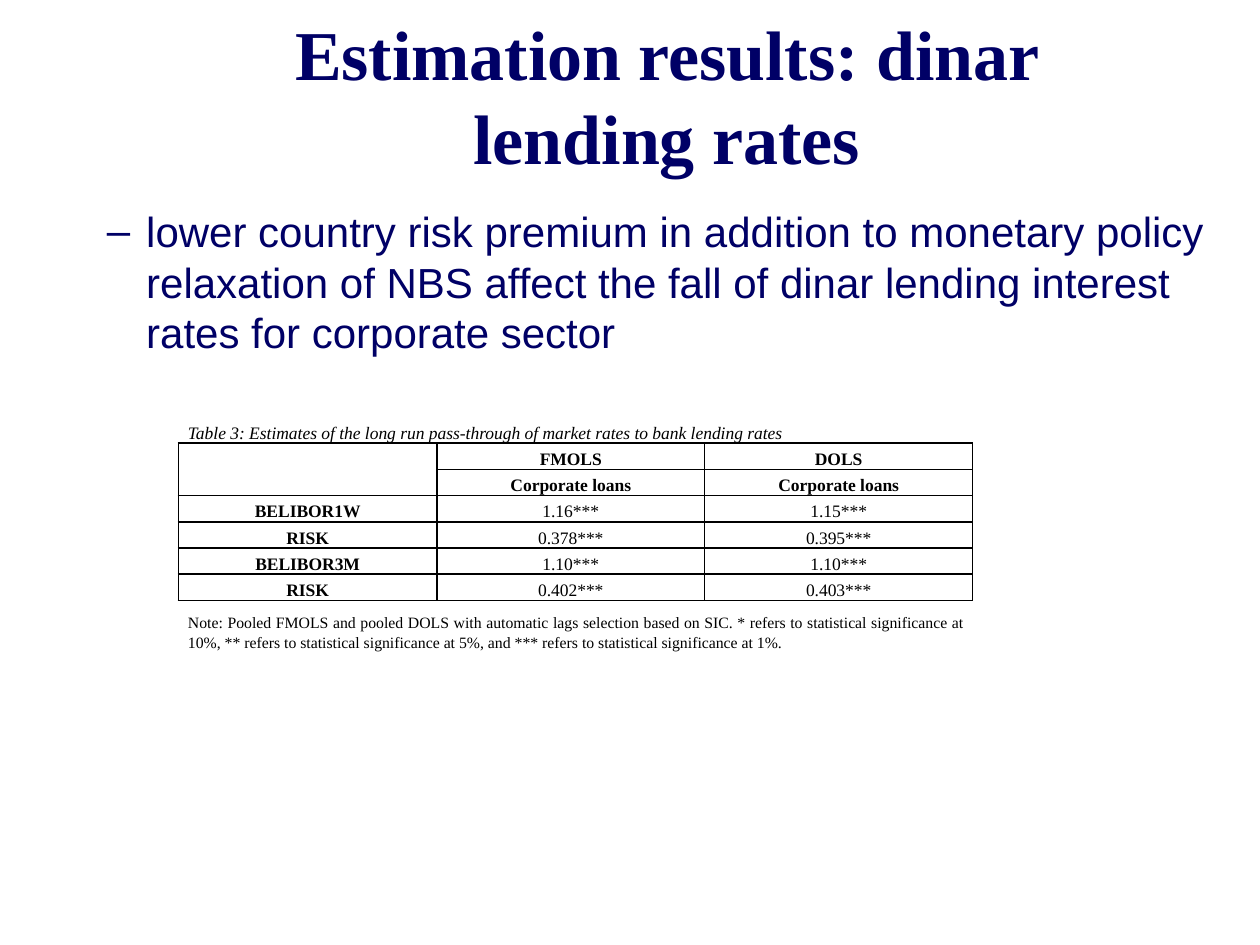
from lxml import etree
from pptx import Presentation
from pptx.dml.color import RGBColor
from pptx.enum.text import MSO_ANCHOR, PP_ALIGN
from pptx.oxml.ns import qn
from pptx.util import Pt

LEFT, CENTER, JUSTIFY = PP_ALIGN.LEFT, PP_ALIGN.CENTER, PP_ALIGN.JUSTIFY
TOP, MIDDLE, BOTTOM = MSO_ANCHOR.TOP, MSO_ANCHOR.MIDDLE, MSO_ANCHOR.BOTTOM
COLORS = {"navy": "000066", "black": "000000"}
SERIF, SANS = "Times New Roman", "Arial"

TITLE = "Estimation results: dinar lending rates"
POINT = ("lower country risk premium in addition to monetary policy relaxation of NBS "
         "affect the fall of dinar lending interest rates for corporate sector")
CAPTION = "Table 3: Estimates of the long run pass-through of market rates to bank lending rates"
NOTE = ("Note: Pooled FMOLS and pooled DOLS with automatic lags selection based on SIC. "
        "* refers to statistical significance at 10%, ** refers to statistical significance "
        "at 5%, and *** refers to statistical significance at 1%.")
ESTIMATES = [
    ("", "FMOLS", "DOLS"),
    ("", "Corporate loans", "Corporate loans"),
    ("BELIBOR1W", "1.16***", "1.15***"),
    ("RISK", "0.378***", "0.395***"),
    ("BELIBOR3M", "1.10***", "1.10***"),
    ("RISK", "0.402***", "0.403***"),
]
HEADER_ROWS = 2
COLUMN_WIDTHS = [147.6, 153.1, 153.1]
CAPTION_HEIGHT, ROW_HEIGHT, NOTE_HEIGHT = 25, 15, 36
TABLE_LEFT, TABLE_TOP = 102, 228.2


def write(frame, text, *, size, font=SERIF, color="black", bold=False, italic=False,
          align=LEFT, spacing=None):
    paragraph = frame.paragraphs[0]
    paragraph.alignment = align
    if spacing:
        paragraph.line_spacing = spacing
    run = paragraph.add_run()
    run.text = text
    run.font.size, run.font.name = Pt(size), font
    run.font.bold, run.font.italic = bold, italic
    run.font.color.rgb = RGBColor.from_string(COLORS[color])
    return paragraph


def add_text_frame(slide, left, top, width, height, anchor):
    box = slide.shapes.add_textbox(Pt(left), Pt(top), Pt(width), Pt(height))
    box.text_frame.word_wrap = True
    box.text_frame.vertical_anchor = anchor
    return box.text_frame


def add_dash_bullet(paragraph, margin, indent):
    properties = paragraph._p.get_or_add_pPr()
    properties.set("marL", str(Pt(margin)))
    properties.set("indent", str(Pt(indent)))
    etree.SubElement(properties, qn("a:buFont"), typeface=SANS)
    etree.SubElement(properties, qn("a:buChar"), char="–")


def set_borders(cell, sides):
    """Draw the named sides in black and clear the others."""
    properties = cell._tc.get_or_add_tcPr()
    for position, side in enumerate("LRTB"):
        line = etree.Element(qn("a:ln" + side), w=str(Pt(1)))
        if side in sides:
            fill = etree.SubElement(line, qn("a:solidFill"))
            etree.SubElement(fill, qn("a:srgbClr"), val=COLORS["black"])
        else:
            etree.SubElement(line, qn("a:noFill"))
        properties.insert(position, line)


def add_estimates_table(slide):
    heights = [CAPTION_HEIGHT] + [ROW_HEIGHT] * len(ESTIMATES) + [NOTE_HEIGHT]
    last = len(heights) - 1
    table = slide.shapes.add_table(
        len(heights), len(COLUMN_WIDTHS), Pt(TABLE_LEFT), Pt(TABLE_TOP),
        Pt(sum(COLUMN_WIDTHS)), Pt(sum(heights))).table
    for column, width in zip(table.columns, COLUMN_WIDTHS):
        column.width = Pt(width)

    contents = [(CAPTION, "", ""), *ESTIMATES, (NOTE, "", "")]
    for r, (height, texts) in enumerate(zip(heights, contents)):
        table.rows[r].height = Pt(height)
        for c, text in enumerate(texts):
            cell = table.cell(r, c)
            cell.fill.background()
            cell.margin_left = cell.margin_right = Pt(5.4)
            cell.margin_top = cell.margin_bottom = 0
            cell.vertical_anchor = MIDDLE if r == last else BOTTOM
            set_borders(cell, {0: "B", last: "T"}.get(r, "LRTB"))
            if not text:
                etree.SubElement(cell.text_frame.paragraphs[0]._p,
                                 qn("a:endParaRPr"), sz="1000")
            elif r == 0:
                write(cell.text_frame, text, size=10, italic=True, spacing=1.15)
            elif r == last:
                write(cell.text_frame, text, size=9, align=JUSTIFY, spacing=1.15)
            else:
                write(cell.text_frame, text, size=10, align=CENTER, spacing=1.15,
                      bold=r <= HEADER_ROWS or c == 0)

    for r in (0, last):
        table.cell(r, 0).merge(table.cell(r, len(COLUMN_WIDTHS) - 1))
    table.cell(1, 0).merge(table.cell(HEADER_ROWS, 0))


def main():
    presentation = Presentation()
    presentation.slide_width, presentation.slide_height = Pt(720), Pt(540)
    slide = presentation.slides.add_slide(presentation.slide_layouts[6])

    title = add_text_frame(slide, 108, 12, 546, 84, MIDDLE)
    write(title, TITLE, size=40, color="navy", bold=True, align=CENTER)

    body = add_text_frame(slide, 18, 114, 690, 90, TOP)
    point = write(body, POINT, size=24, font=SANS, color="navy")
    add_dash_bullet(point, 58.5, -22.5)

    add_estimates_table(slide)
    presentation.save("out.pptx")


if __name__ == "__main__":
    main()
